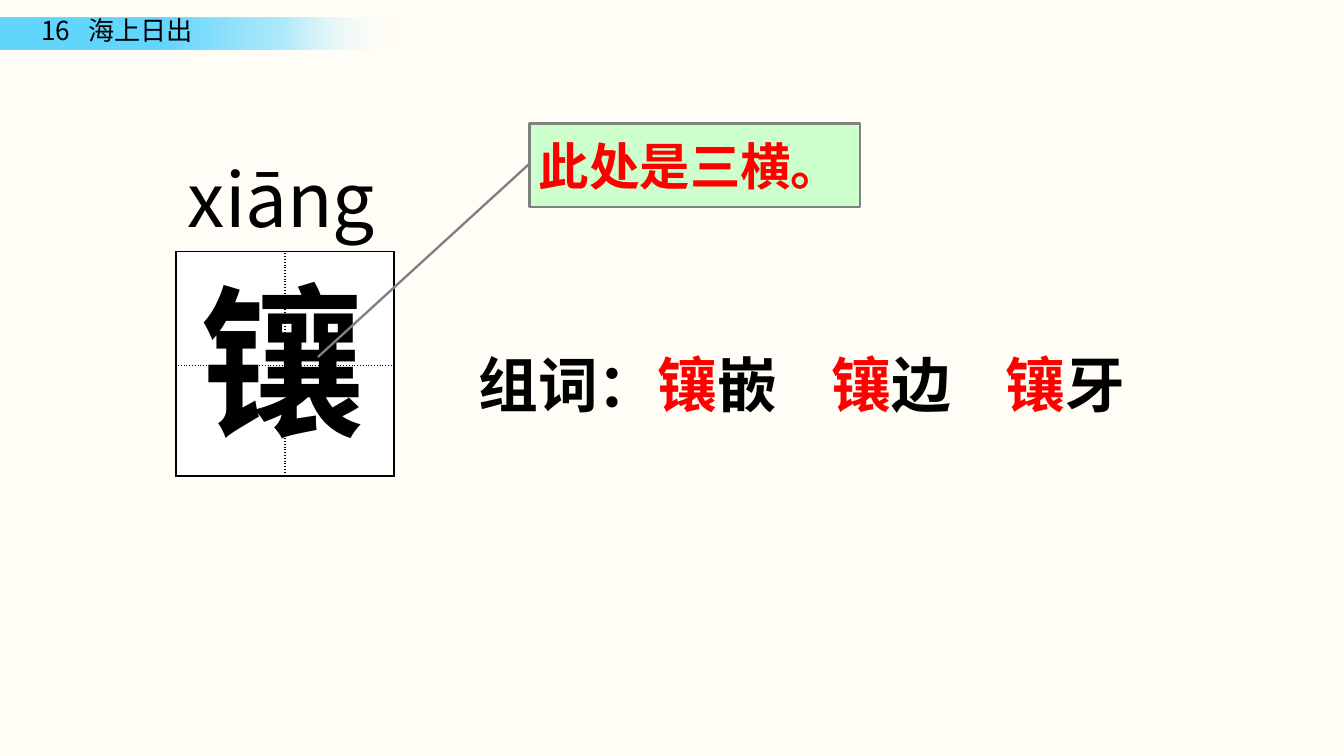
from dataclasses import dataclass

from lxml import etree
from pptx import Presentation
from pptx.dml.color import RGBColor
from pptx.enum.shapes import MSO_SHAPE
from pptx.enum.text import MSO_ANCHOR, PP_ALIGN
from pptx.oxml.ns import qn
from pptx.util import Inches, Pt

RECTANGLE = MSO_SHAPE.RECTANGLE
CALLOUT = MSO_SHAPE.LINE_CALLOUT_2
MIDDLE = MSO_ANCHOR.MIDDLE
LEFT = PP_ALIGN.LEFT


@dataclass(frozen=True)
class Theme:
    background: str = "FFFDF5"
    black: str = "000000"
    red: str = "FF0000"
    white: str = "FFFFFF"
    callout: str = "CCFFCC"
    grey: str = "808080"
    banner: tuple = ((40, "63D6FF", 100), (70, "97E4FF", 76), (97, "FFFFFF", 0))
    chinese: str = "Noto Sans CJK SC"
    pinyin: str = "Noto Sans CJK JP"
    latin: str = "Calibri"
    lesson_size: int = 14
    note_size: int = 27
    words_size: int = 32
    pinyin_size: int = 40
    character_size: int = 88


theme = Theme()


def write(shape, spans, size, font, color, bold=False, tabs=(), wrap=True, margins=(0.1, 0.05)):
    frame = shape.text_frame
    frame.word_wrap = wrap
    frame.margin_left = frame.margin_right = Inches(margins[0])
    frame.margin_top = frame.margin_bottom = Inches(margins[1])
    para = frame.paragraphs[0]
    para.alignment = LEFT
    if tabs:
        stops = etree.SubElement(para._p.get_or_add_pPr(), qn("a:tabLst"))
        for position in tabs:
            etree.SubElement(stops, qn("a:tab"), pos=str(Inches(position)), algn="l")
    para.font.size = Pt(size)
    para.font.bold = bold
    para.font.name = font
    para.font.color.rgb = RGBColor.from_string(color)
    east_asian = theme.chinese if font == theme.latin else font
    etree.SubElement(para.font._element, qn("a:ea"), typeface=east_asian)
    for text, span_color in spans:
        span = para.add_run()
        span.text = text
        if span_color != color:
            span.font.color.rgb = RGBColor.from_string(span_color)


def add_text(left, top, width, height, spans, *style, **options):
    box = page.shapes.add_textbox(Inches(left), Inches(top), Inches(width), Inches(height))
    write(box, spans, *style, **options)


deck = Presentation()
deck.slide_width = Inches(10)
deck.slide_height = Inches(10) * 9 // 16
page = deck.slides.add_slide(deck.slide_layouts[6])
page.background.fill.solid()
page.background.fill.fore_color.rgb = RGBColor.from_string(theme.background)

banner = page.shapes.add_shape(RECTANGLE, 0, Inches(0.13), Inches(3.03), Inches(0.24))
banner.shadow.inherit = False
banner.line.fill.background()
banner.fill.gradient()
banner.fill.gradient_angle = 0
stop_list = banner._element.spPr.find(".//" + qn("a:gsLst"))
for stop in list(stop_list):
    stop_list.remove(stop)
for position, color, opacity in theme.banner:
    stop = etree.SubElement(stop_list, qn("a:gs"), pos=str(position * 1000))
    tint = etree.SubElement(stop, qn("a:srgbClr"), val=color)
    etree.SubElement(tint, qn("a:alpha"), val=str(opacity * 1000))

add_text(0.21, 0.06, 1.38, 0.34, [("16\t海上日出", theme.black)],
         theme.lesson_size, theme.chinese, theme.black, tabs=[0.35])

grid = page.shapes.add_table(2, 2, Inches(1.31), Inches(1.87), Inches(1.62), Inches(1.67)).table
grid.first_row = False
grid.horz_banding = False
for row, height in zip(grid.rows, (0.85, 0.82)):
    row.height = Inches(height)
for row in range(2):
    for column in range(2):
        cell = grid.cell(row, column)
        properties = cell._tc.get_or_add_tcPr()
        solid_edges = {"lnL": column == 0, "lnR": column == 1, "lnT": row == 0, "lnB": row == 1}
        for edge, is_solid in solid_edges.items():
            border = etree.SubElement(properties, qn("a:" + edge), w=str(Pt(1)))
            paint = etree.SubElement(border, qn("a:solidFill"))
            etree.SubElement(paint, qn("a:srgbClr"), val=theme.black)
            etree.SubElement(border, qn("a:prstDash"), val="solid" if is_solid else "sysDot")
        cell.fill.solid()
        cell.fill.fore_color.rgb = RGBColor.from_string(theme.white)

add_text(1.39, 1.89, 1.89, 1.58, [("镶", theme.black)],
         theme.character_size, theme.chinese, theme.black, bold=True)

callout = page.shapes.add_shape(CALLOUT, Inches(3.94), Inches(0.92), Inches(2.46), Inches(0.62))
callout.shadow.inherit = False
for index, value in enumerate((0.11, 0, 0.48, 0, 2.8, -0.64)):
    callout.adjustments[index] = value
callout.fill.solid()
callout.fill.fore_color.rgb = RGBColor.from_string(theme.callout)
callout.line.color.rgb = RGBColor.from_string(theme.grey)
callout.line.width = Pt(1.25)
callout.text_frame.vertical_anchor = MIDDLE
write(callout, [("此处是三横。", theme.red)], theme.note_size, theme.chinese, theme.red,
      bold=True, margins=(0.07, 0.04))

words = [("组词：", theme.black)]
for ending in ("嵌\t", "边\t", "牙"):
    words += [("镶", theme.red), (ending, theme.black)]
add_text(3.49, 2.55, 5.06, 0.61, words, theme.words_size, theme.latin, theme.black,
         bold=True, tabs=[2.63, 3.92], margins=(0.07, 0.04))

add_text(1.3, 1.09, 1.63, 0.77, [("xiāng", theme.black)],
         theme.pinyin_size, theme.pinyin, theme.black, wrap=False)

deck.save("out.pptx")
